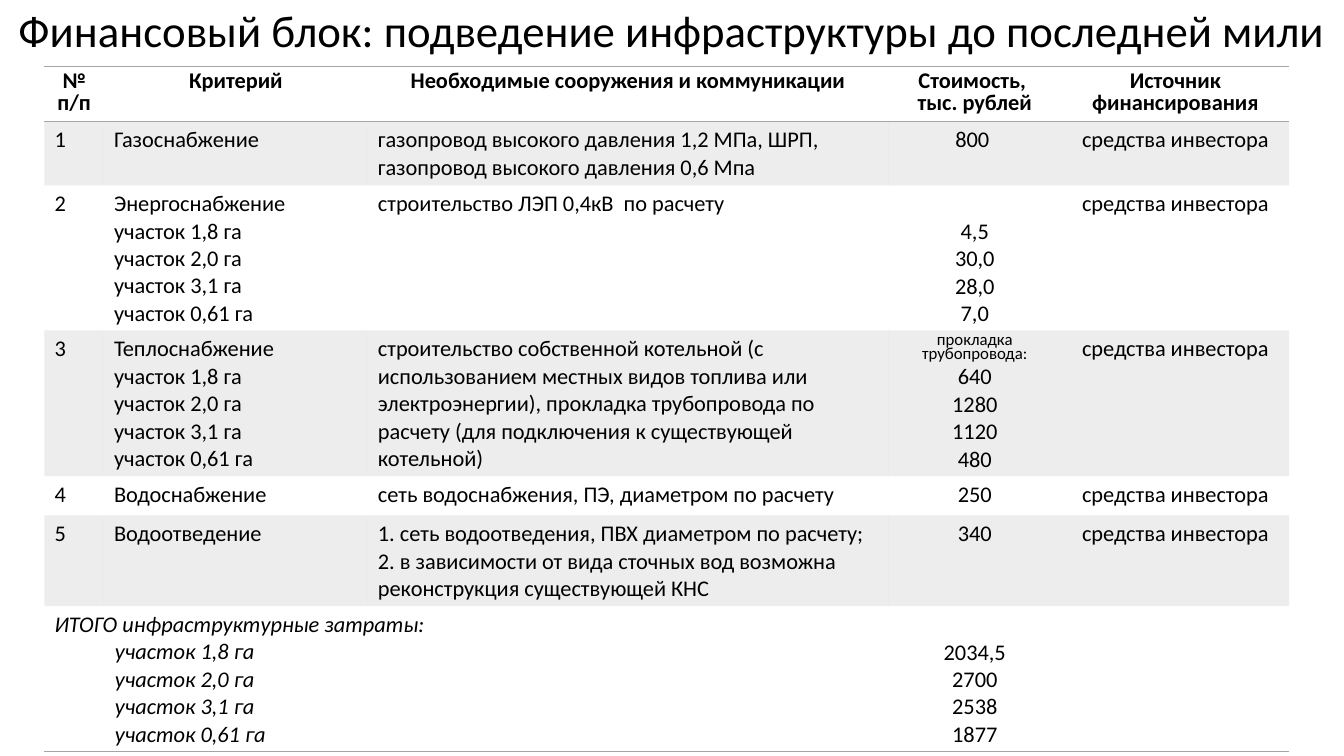
from lxml.etree import SubElement
from pptx import Presentation
from pptx.dml.color import RGBColor
from pptx.enum.text import MSO_ANCHOR as Anchor, PP_ALIGN as Align
from pptx.oxml.ns import qn
from pptx.util import Cm, Pt

BLACK = RGBColor(0x00, 0x00, 0x00)
GREY = RGBColor(0xA5, 0xA5, 0xA5)
FONT = "Calibri"
PLAIN_TABLE_STYLE = "{2D5ABB26-0587-4C30-8999-92F81FD0307C}"

COLUMN_WIDTHS = [1.5, 6.65, 13.11, 4.37, 5.74]
ROW_HEIGHTS = [1.37, 1.3, 2.92, 3.45, 0.99, 2.21, 2.03]
CENTERED_COLUMNS = (3, 4)
CELL_MARGIN = 0.13
LINE_HEIGHT = 0.69

PLOTS = ["участок 1,8 га", "участок 2,0 га", "участок 3,1 га", "участок 0,61 га"]
INVESTOR = ["средства инвестора"]
PIPELINE_NOTE = "прокладка трубопровода:"
HEADERS = ["№ п/п", "Критерий", "Необходимые сооружения и коммуникации",
           "Стоимость, \vтыс. рублей", "Источник финансирования"]
# Criterion, required structures, cost: each a list of paragraphs
CRITERIA = [
    (["Газоснабжение"],
     ["газопровод высокого давления 1,2 МПа, ШРП, газопровод высокого давления 0,6 Мпа"],
     ["800 "]),
    (["Энергоснабжение", *PLOTS],
     ["строительство ЛЭП 0,4кВ  по расчету"],
     ["4,5", "30,0", "28,0", "7,0"]),
    (["Теплоснабжение", *PLOTS],
     ["строительство собственной котельной (с использованием местных видов топлива "
      "или электроэнергии), прокладка трубопровода по расчету "
      "(для подключения к существующей котельной)"],
     [PIPELINE_NOTE, "640", "1280", "1120", "480"]),
    (["Водоснабжение"],
     ["сеть водоснабжения, ПЭ, диаметром по расчету"],
     ["250"]),
    (["Водоотведение"],
     ["1. сеть водоотведения, ПВХ диаметром по расчету;",
      "2. в зависимости от вида сточных вод возможна реконструкция существующей КНС"],
     ["340"]),
]
TOTALS = ["2034,5", "2700", "2538", "1877"]


def write_paragraphs(frame, texts, size=16, align=Align.LEFT, bold=False, italic=False):
    for index, text in enumerate(texts):
        para = frame.paragraphs[0] if index == 0 else frame.add_paragraph()
        para.text = text
        para.alignment = align
        font = para.font
        font.name, font.size, font.bold, font.italic = FONT, Pt(size), bold, italic
        font.color.rgb = BLACK
    return frame.paragraphs


def add_title(slide, text):
    box = slide.shapes.add_textbox(0, 0, Cm(33.87), Cm(1.65))
    frame = box.text_frame
    frame.word_wrap = True
    frame.vertical_anchor = Anchor.MIDDLE
    write_paragraphs(frame, [text], 32, Align.CENTER)[0].line_spacing = 0.9


def add_plain_table(slide):
    frame = slide.shapes.add_table(len(ROW_HEIGHTS), len(COLUMN_WIDTHS), Cm(1.12), Cm(1.68),
                                   Cm(sum(COLUMN_WIDTHS)), Cm(sum(ROW_HEIGHTS)))
    table = frame.table
    table.first_row = table.horz_banding = False
    next(frame.element.iter(qn("a:tableStyleId"))).text = PLAIN_TABLE_STYLE
    for column, width in zip(table.columns, COLUMN_WIDTHS):
        column.width = Cm(width)
    for row, height in zip(table.rows, ROW_HEIGHTS):
        row.height = Cm(height)
    return table


def draw_borders(cell, *edges):
    """Draw grey lines on the edges, named lnT and lnB in that order."""
    properties = cell._tc.get_or_add_tcPr()
    for edge in edges:
        line = SubElement(properties, qn(f"a:{edge}"), w=str(Pt(1)))
        fill = SubElement(line, qn("a:solidFill"))
        SubElement(fill, qn("a:srgbClr"), val=str(GREY))


def shade(cell):
    """Fill the cell with grey at 20 % opacity."""
    cell.fill.solid()
    cell.fill.fore_color.rgb = GREY
    color = next(cell._tc.tcPr.iter(qn("a:srgbClr")))
    SubElement(color, qn("a:alpha"), val="20000")


def skip_first_line(cell):
    cell.margin_top = Cm(CELL_MARGIN + LINE_HEIGHT)


def fill_header(table):
    for column, text in enumerate(HEADERS):
        cell = table.cell(0, column)
        para = write_paragraphs(cell.text_frame, [text], align=Align.CENTER, bold=True)[0]
        para.line_spacing = Pt(16)
        draw_borders(cell, "lnT", "lnB")


def fill_criterion(table, number, criterion):
    for column, texts in enumerate([[str(number)], *criterion, INVESTOR]):
        cell = table.cell(number, column)
        align = Align.CENTER if column in CENTERED_COLUMNS else Align.LEFT
        paragraphs = write_paragraphs(cell.text_frame, texts, align=align)
        if texts[0] == PIPELINE_NOTE:
            paragraphs[0].font.size = Pt(12)
            paragraphs[0].line_spacing = Pt(10)
        elif len(texts) == len(PLOTS):
            skip_first_line(cell)
        if number % 2:
            shade(cell)


def fill_totals(table):
    last = len(ROW_HEIGHTS) - 1
    label, costs = table.cell(last, 0), table.cell(last, 3)
    label.merge(table.cell(last, 2))
    lines = write_paragraphs(label.text_frame, ["ИТОГО инфраструктурные затраты:", *PLOTS],
                             italic=True)
    for para in lines[1:]:
        para._p.get_or_add_pPr().set("marL", str(Cm(1.52)))
    write_paragraphs(costs.text_frame, TOTALS, align=Align.CENTER)
    skip_first_line(costs)
    for column in range(len(COLUMN_WIDTHS)):
        draw_borders(table.cell(last, column), "lnB")


def main():
    deck = Presentation()
    deck.slide_width, deck.slide_height = Cm(33.87), Cm(19.05)
    slide = deck.slides.add_slide(deck.slide_layouts[6])
    add_title(slide, "Финансовый блок: подведение инфраструктуры до последней мили")
    table = add_plain_table(slide)
    fill_header(table)
    for number, criterion in enumerate(CRITERIA, start=1):
        fill_criterion(table, number, criterion)
    fill_totals(table)
    deck.save("out.pptx")


if __name__ == "__main__":
    main()
